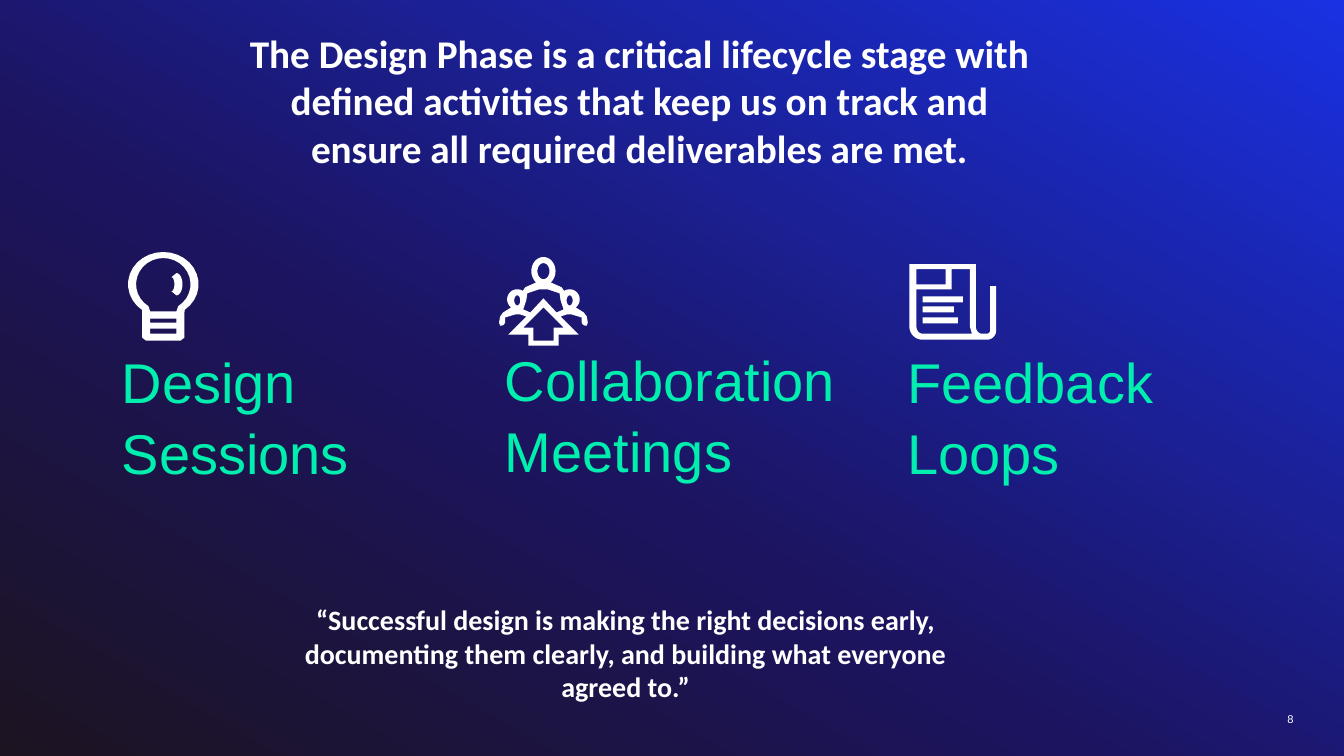
from copy import deepcopy
from math import cos, radians, sin

from pptx import Presentation
from pptx.dml.color import RGBColor
from pptx.enum.shapes import MSO_SHAPE as Shape
from pptx.enum.text import MSO_ANCHOR as Anchor, MSO_AUTO_SIZE as AutoSize, PP_ALIGN as Align
from pptx.oxml.ns import qn
from pptx.util import Inches, Pt

WHITE = "FFFFFF"
GREEN = "00EEAE"


def color(value):
    return RGBColor.from_string(value)


def arc(x, y, width, height, start=0, end=360):
    angles = [radians(start + (end - start) * step / 24) for step in range(25)]
    return [(x + width * cos(angle), y + height * sin(angle)) for angle in angles]


deck = Presentation()
deck.slide_width = Inches(13.33)
deck.slide_height = Inches(7.5)
page = deck.slides.add_slide(deck.slide_layouts[5])

backdrop = page.background.fill
backdrop.gradient()
backdrop.gradient_angle = 60
stop_list = page.element.find(".//" + qn("a:gsLst"))
stop_list.append(deepcopy(stop_list[0]))
backdrop_stops = [(0, "1C1420"), (0.41, "1C145E"), (1, "1931E3")]
for stop, (position, shade) in zip(backdrop.gradient_stops, backdrop_stops):
    stop.position = position
    stop.color.rgb = color(shade)

title = page.shapes.title
title.left, title.top = Inches(2.2), Inches(0.24)
title.width, title.height = Inches(8.28), Inches(1.51)
title.text_frame.text = (
    "The Design Phase is a critical lifecycle stage with defined activities "
    "that keep us on track and ensure all required deliverables are met."
)
quote = (
    "“Successful design is making the right decisions early, documenting them "
    "clearly, and building what everyone agreed to.”"
)
texts = [(title, 28, "Calibri", WHITE, True, Align.CENTER, Anchor.MIDDLE, 1)]
box_rows = [
    ("Design Sessions", 1.11, 3.37, 2.8, 0.78, 40, "Arial", GREEN, False, Align.LEFT, Anchor.TOP, 1.05),
    ("Collaboration Meetings", 4.91, 3.35, 3.51, 0.78, 40, "Arial", GREEN, False, Align.LEFT, Anchor.TOP, 1.05),
    ("Feedback Loops", 8.9, 3.37, 3.17, 0.78, 40, "Arial", GREEN, False, Align.LEFT, Anchor.TOP, 1.05),
    (quote, 2.87, 5.93, 6.67, 1.11, 20, "Calibri", WHITE, True, Align.CENTER, Anchor.TOP, 1),
    ("8", 12.48, 7, 0.35, 0.2, 8, "Arial", WHITE, False, Align.RIGHT, Anchor.BOTTOM, 1),
]
for words, left, top, width, height, *style in box_rows:
    box = page.shapes.add_textbox(Inches(left), Inches(top), Inches(width), Inches(height))
    box.text_frame.text = words
    texts.append((box, *style))
page_number = box.text_frame
page_number.margin_left = page_number.margin_right = 0
page_number.margin_top = page_number.margin_bottom = 0

for box, size, font, shade, bold, align, anchor, spacing in texts:
    frame = box.text_frame
    frame.word_wrap = True
    frame.auto_size = AutoSize.NONE
    frame.vertical_anchor = anchor
    para = frame.paragraphs[0]
    para.alignment = align
    para.line_spacing = spacing
    span = para.runs[0]
    span.font.name = font
    span.font.size = Pt(size)
    span.font.bold = bold
    span.font.color.rgb = color(shade)

bulb = [
    arc(1.62, 2.82, 0.35, 0.32, 127, 413) + [(1.83, 3.35), (1.79, 3.38), (1.45, 3.38), (1.41, 3.35)],
    arc(1.62, 2.82, 0.27, 0.26, 123, 417) + [(1.75, 3.09), (1.49, 3.09)],
    [(1.49, 3.16), (1.75, 3.16), (1.75, 3.2), (1.49, 3.2)],
    [(1.49, 3.26), (1.75, 3.26), (1.75, 3.31), (1.49, 3.31)],
]
glint = [arc(1.75, 2.82, 0.06, 0.11, -90, 90) + arc(1.7, 2.82, 0.03, 0.07, 90, -90)]

team_axis = 5.39
team_halves = [
    arc(team_axis, 2.69, 0.12, 0.14, 270, 413)
    + [(5.57, 2.85)]
    + arc(5.65, 2.97, 0.1, 0.1, 237, 413)
    + [(5.79, 3.1), (5.82, 3.14), (5.83, 3.2), (5.82, 3.23), (5.8, 3.23), (5.78, 3.22)]
    + [(5.77, 3.2), (5.77, 3.15), (5.67, 3.12), (5.62, 3.12), (5.56, 3.14)]
    + [(5.74, 3.32), (5.54, 3.32), (5.54, 3.43)],
    [(5.43, 2.87), (5.55, 2.91), (5.56, 2.98), (5.59, 3.07), (5.52, 3.1), (team_axis, 2.96)],
    [(team_axis, 3.05), (5.59, 3.25), (5.49, 3.25), (5.49, 3.38)],
]
team = [half + [(2 * team_axis - x, y) for x, y in reversed(half)] for half in team_halves]
team += [
    arc(team_axis, 2.69, 0.06, 0.08),
    arc(5.65, 2.98, 0.03, 0.05),
    arc(2 * team_axis - 5.65, 2.98, 0.03, 0.05),
]

newspaper = [
    [(9.02, 2.62), (9.68, 2.62)]
    + arc(9.74, 3.24, 0.06, 0.07, 180, 90)
    + arc(9.79, 3.28, 0.03, 0.03, 90, 0)
    + [(9.82, 2.84), (9.88, 2.84)]
    + arc(9.79, 3.28, 0.09, 0.09, 0, 90)
    + arc(9.15, 3.24, 0.13, 0.13, 90, 180),
    [(9.09, 2.67), (9.38, 2.67), (9.38, 2.82), (9.09, 2.82)],
    [(9.09, 2.87), (9.44, 2.87), (9.44, 2.67), (9.62, 2.67), (9.62, 3.24), (9.64, 3.31)]
    + arc(9.15, 3.24, 0.06, 0.07, 90, 180),
]

icon_parts = []
for contours in (team, glint, bulb, newspaper):
    outlines = [[(Inches(x), Inches(y)) for x, y in contour] for contour in contours]
    builder = page.shapes.build_freeform(*outlines[0][0])
    builder.add_line_segments(outlines[0][1:])
    for outline in outlines[1:]:
        builder.move_to(*outline[0])
        builder.add_line_segments(outline[1:])
    icon_parts.append(builder.convert_to_shape())

for top, width in [(2.94, 0.4), (3.04, 0.31), (3.15, 0.35)]:
    icon_parts.append(
        page.shapes.add_shape(Shape.RECTANGLE, Inches(9.15), Inches(top), Inches(width), Inches(0.06))
    )

for part in icon_parts:
    part.shadow.inherit = False
    part.fill.solid()
    part.fill.fore_color.rgb = color(WHITE)
    part.line.fill.background()

deck.save("out.pptx")
